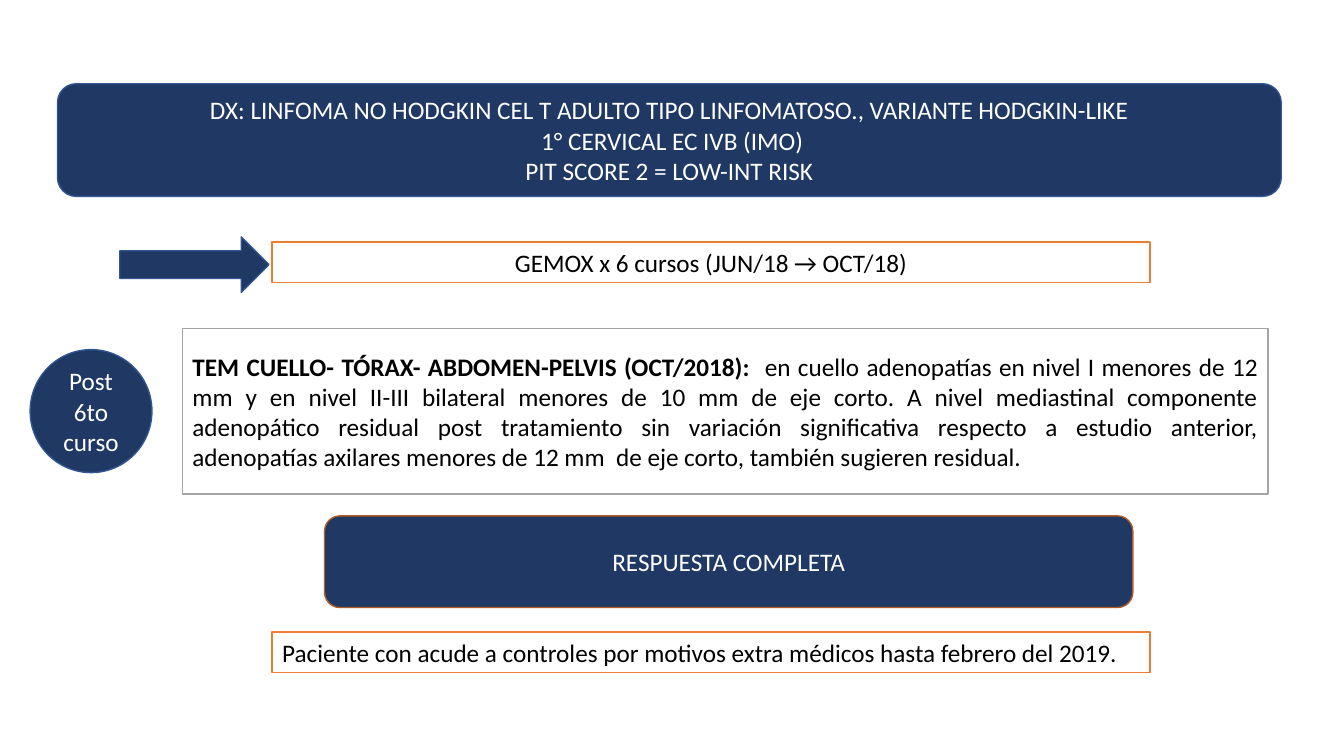
import pptx
import pptx.dml.color
import pptx.enum.shapes
import pptx.enum.text
import pptx.util

Cm = pptx.util.Cm
SHAPE = pptx.enum.shapes.MSO_SHAPE
ALIGN = pptx.enum.text.PP_ALIGN
ANCHOR = pptx.enum.text.MSO_ANCHOR

NAVY, WHITE, BLACK = "203864", "FFFFFF", "000000"
BLUE, ORANGE, BROWN, GRAY = "325491", "ED7D31", "AF5C24", "A5A5A5"


def color(hex_code):
    return pptx.dml.color.RGBColor.from_string(hex_code)


class ClinicalSlide:
    font_name = "Calibri"
    font_size = pptx.util.Pt(18)
    line_width = pptx.util.Pt(1)

    def __init__(self, slide):
        self.slide = slide

    def shape(self, kind, box, fill, line):
        item = self.slide.shapes.add_shape(kind, *[Cm(length) for length in box])
        item.shadow.inherit = False
        item.fill.solid()
        item.fill.fore_color.rgb = color(fill)
        item.line.color.rgb = color(line)
        item.line.width = self.line_width
        return item

    def label(self, item, paragraphs, ink, align, anchor=ANCHOR.MIDDLE):
        """Each paragraph is a list of runs; the first of several runs is bold."""
        frame = item.text_frame
        frame.word_wrap = True
        frame.vertical_anchor = anchor
        for index, texts in enumerate(paragraphs):
            paragraph = frame.paragraphs[0] if index == 0 else frame.add_paragraph()
            paragraph.alignment = align
            for position, text in enumerate(texts):
                run = paragraph.add_run()
                run.text = text
                run.font.name = self.font_name
                run.font.size = self.font_size
                run.font.color.rgb = color(ink)
                run.font.bold = len(texts) > 1 and position == 0

    def badge(self, kind, box, lines, line=BLUE):
        item = self.shape(kind, box, NAVY, line)
        self.label(item, [[text] for text in lines], WHITE, ALIGN.CENTER)

    def note(self, top, text, align):
        item = self.shape(SHAPE.RECTANGLE, (6.86, top, 22.12, 1.02), WHITE, ORANGE)
        self.label(item, [[text]], BLACK, align, ANCHOR.TOP)
        item.text_frame.auto_size = pptx.enum.text.MSO_AUTO_SIZE.SHAPE_TO_FIT_TEXT

    def report(self, box, heading, findings):
        item = self.shape(SHAPE.RECTANGLE, box, WHITE, GRAY)
        self.label(item, [[heading, findings]], BLACK, ALIGN.JUSTIFY)

    def arrow(self, box):
        self.shape(SHAPE.RIGHT_ARROW, box, NAVY, BLUE)


def main():
    deck = pptx.Presentation()
    deck.slide_width, deck.slide_height = Cm(33.87), Cm(19.05)
    case = ClinicalSlide(deck.slides.add_slide(deck.slide_layouts[6]))

    # Diagnosis
    case.badge(SHAPE.ROUNDED_RECTANGLE, (1.45, 2.11, 30.84, 2.84), [
        "DX: LINFOMA NO HODGKIN CEL T ADULTO TIPO LINFOMATOSO., VARIANTE HODGKIN-LIKE",
        " 1° CERVICAL EC IVB (IMO)",
        "PIT SCORE 2 = LOW-INT RISK",
    ])

    # Treatment
    case.arrow((3.02, 5.97, 3.76, 1.4))
    case.note(6.1, "GEMOX x 6 cursos (JUN/18 → OCT/18)", ALIGN.CENTER)

    # Imaging after the sixth course
    case.badge(SHAPE.OVAL, (0.76, 8.81, 3.07, 3.1), ["Post 6to curso"])
    case.report(
        (4.6, 8.28, 27.36, 4.17),
        "TEM CUELLO- TÓRAX- ABDOMEN-PELVIS (OCT/2018): ",
        " en cuello adenopatías en nivel I menores de 12 mm y en nivel II-III "
        "bilateral menores de 10 mm de eje corto. A nivel mediastinal componente "
        "adenopático residual post tratamiento sin variación significativa "
        "respecto a estudio anterior, adenopatías axilares menores de 12 mm  de "
        "eje corto, también sugieren residual.",
    )

    # Response and follow-up
    case.badge(SHAPE.ROUNDED_RECTANGLE, (8.18, 13, 20.37, 2.31),
               ["RESPUESTA COMPLETA"], BROWN)
    case.note(15.93, "Paciente con acude a controles por motivos extra médicos "
              "hasta febrero del 2019.", ALIGN.LEFT)

    deck.save("out.pptx")


if __name__ == "__main__":
    main()
